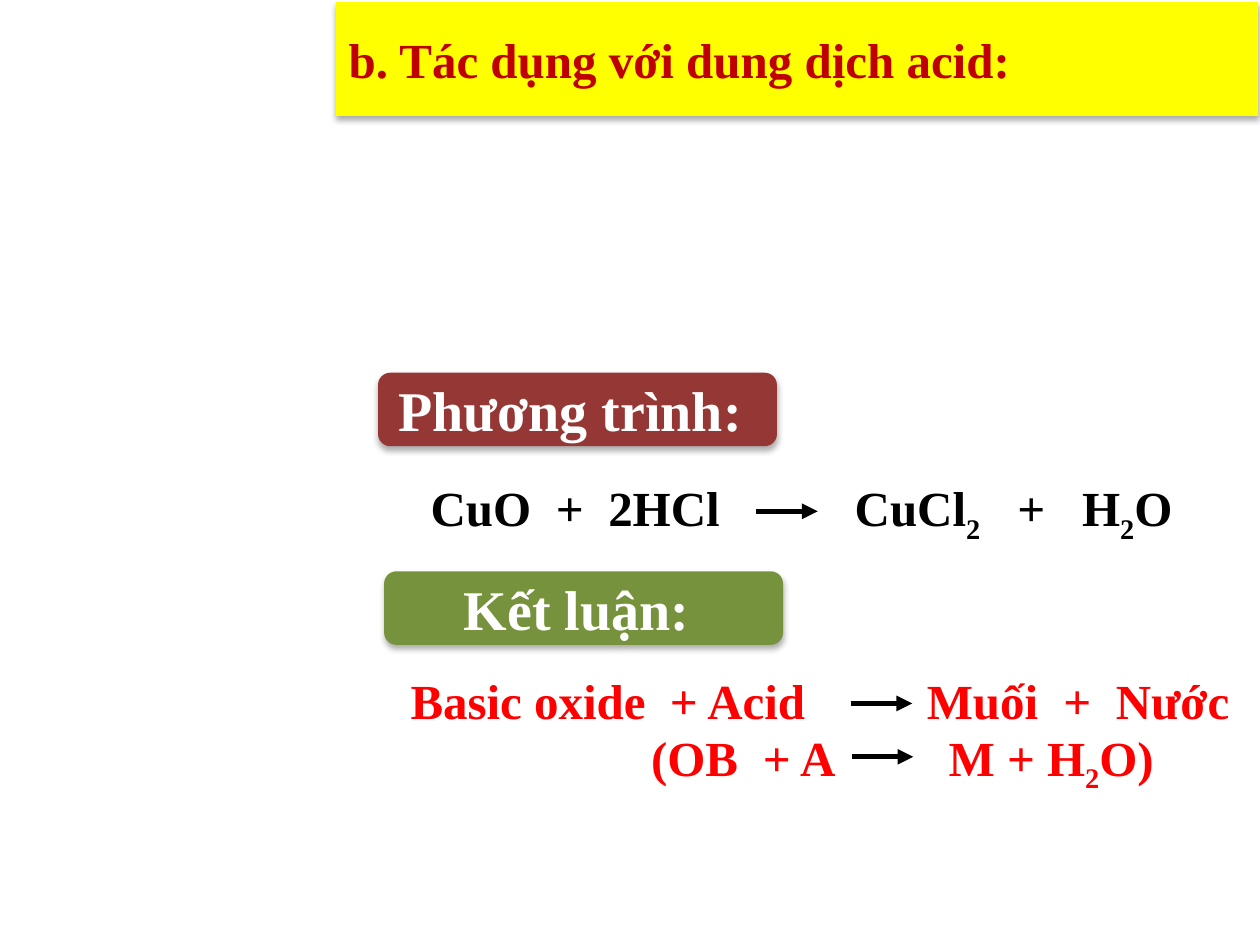
from lxml.etree import SubElement
from pptx import Presentation
from pptx.dml.color import RGBColor
from pptx.enum.shapes import MSO_CONNECTOR as CONNECTOR, MSO_SHAPE as SHAPE
from pptx.enum.text import MSO_ANCHOR as ANCHOR, MSO_AUTO_SIZE as AUTO_SIZE, PP_ALIGN as ALIGN
from pptx.oxml import parse_xml
from pptx.oxml.ns import nsdecls, qn
from pptx.util import Pt

COLORS = {
    "yellow": "FFFF00", "dark red": "C00000", "brown": "953734", "green": "76923C",
    "white": "FFFFFF", "black": "000000", "red": "FF0000",
}
SHADOW = f"""<a:effectLst {nsdecls('a')}>
  <a:outerShdw blurRad="{Pt(3.5)}" dist="{Pt(2.2)}" dir="5400000" rotWithShape="0">
    <a:srgbClr val="{COLORS['black']}"><a:alpha val="32000"/></a:srgbClr>
  </a:outerShdw>
</a:effectLst>"""


def add_run(paragraph, text, size, color):
    run = paragraph.add_run()
    run.text = text
    font_format = {"name": "Times New Roman", "size": Pt(size), "bold": True}
    for name, value in font_format.items():
        setattr(run.font, name, value)
    run.font.color.rgb = RGBColor.from_string(COLORS[color])
    return run


def style_label(shape, text, size, fill, color, align):
    """Give a heading or label its fill, soft shadow and single line of text."""
    shape.fill.solid()
    shape.fill.fore_color.rgb = RGBColor.from_string(COLORS[fill])
    shape.line.fill.background()
    shape._element.spPr.append(parse_xml(SHADOW))
    frame_format = {
        "word_wrap": True, "auto_size": AUTO_SIZE.NONE, "vertical_anchor": ANCHOR.MIDDLE,
    }
    for name, value in frame_format.items():
        setattr(shape.text_frame, name, value)
    paragraph = shape.text_frame.paragraphs[0]
    paragraph.alignment = align
    add_run(paragraph, text, size, color)


presentation = Presentation()
presentation.slide_width, presentation.slide_height = Pt(720), Pt(540)
slide = presentation.slides.add_slide(presentation.slide_layouts[5])

# Heading
title = slide.shapes.title
title_place = {"left": 192, "top": 1.2, "width": 527, "height": 65}
for name, value in title_place.items():
    setattr(title, name, Pt(value))
geometry = SubElement(title._element.spPr, qn("a:prstGeom"), prst="roundRect")
SubElement(geometry, qn("a:avLst"))
style_label(title, "b. Tác dụng với dung dịch acid:", 28, "yellow", "dark red", ALIGN.LEFT)

# Section labels
labels = [
    ("Phương trình: ", 216, 213, "brown"),
    ("Kết luận: ", 219.5, 326.5, "green"),
]
for text, left, top, fill in labels:
    label = slide.shapes.add_shape(
        SHAPE.ROUNDED_RECTANGLE, Pt(left), Pt(top), Pt(228), Pt(42))
    style_label(label, text, 32, fill, "white", ALIGN.CENTER)

# Reactions: text, left, top, width, colour, tab stops; "_" precedes a subscript digit
reactions = [
    ("CuO\t+\t2HCl\tCuCl_2\t+\tH_2O", 239, 269.5, 456, "black",
     [71.6, 101.5, 242.3, 335.3, 372.3]),
    ("Basic oxide\t+ Acid\tMuối\t+\tNước", 227.5, 379.5, 492, "red",
     [148.2, 295, 373, 403]),
    ("\t(OB\t+ A\tM + H_2O)", 239, 412, 492, "red", [126, 189.8, 296]),
]
for text, left, top, width, color, stops in reactions:
    box = slide.shapes.add_textbox(Pt(left), Pt(top), Pt(width), Pt(41))
    box.text_frame.word_wrap = True
    paragraph = box.text_frame.paragraphs[0]
    tab_list = SubElement(paragraph._p.get_or_add_pPr(), qn("a:tabLst"))
    for stop in stops:
        SubElement(tab_list, qn("a:tab"), pos=str(Pt(stop)), algn="l")
    first, *others = text.split("_")
    add_run(paragraph, first, 28, color)
    for part in others:
        subscript = add_run(paragraph, part[0], 28, color)
        subscript.font._element.set("baseline", "-25000")
        add_run(paragraph, part[1:], 28, color)

# Reaction arrows
for left, top in [(432, 292.2), (486, 402), (486.6, 432.5)]:
    arrow = slide.shapes.add_connector(
        CONNECTOR.STRAIGHT, Pt(left), Pt(top), Pt(left + 35.3), Pt(top))
    arrow.line.width = Pt(3)
    arrow.line.color.rgb = RGBColor.from_string(COLORS["black"])
    SubElement(arrow.line._get_or_add_ln(), qn("a:tailEnd"), type="triangle")
    SubElement(arrow._element.spPr, qn("a:effectLst"))

presentation.save("out.pptx")
